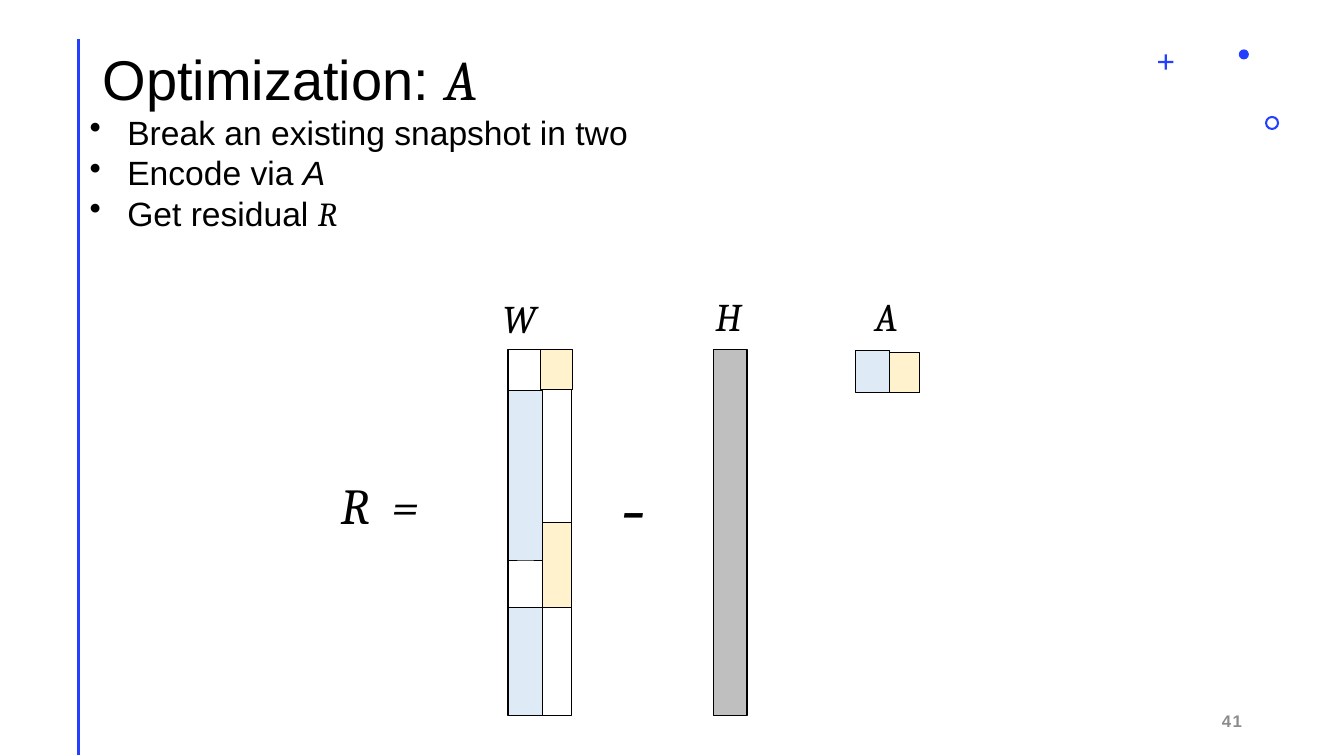
import pptx
import pptx.util
import pptx.dml.color
import pptx.enum.shapes
import pptx.enum.text
import pptx.oxml.ns
import lxml.etree

Pt = pptx.util.Pt
SHAPE = pptx.enum.shapes.MSO_SHAPE
ANCHOR = pptx.enum.text.MSO_ANCHOR
ALIGN = pptx.enum.text.PP_ALIGN

COLOURS = {
    "accent": "243FFF",
    "black": "000000",
    "white": "FFFFFF",
    "blue": "DEEBF7",
    "yellow": "FFF2CC",
    "grey": "BFBFBF",
    "number": "8C8C8C",
}


def rgb(name):
    return pptx.dml.color.RGBColor.from_string(COLOURS[name])


def add_block(shapes, left, top, width, height, fill, line=0.5, kind=SHAPE.RECTANGLE):
    """Add a filled shape; a line width of 0 means no outline."""
    block = shapes.add_shape(kind, Pt(left), Pt(top), Pt(width), Pt(height))
    block.shadow.inherit = False
    block.fill.solid()
    block.fill.fore_color.rgb = rgb(fill)
    if line:
        block.line.color.rgb = rgb("black")
        block.line.width = Pt(line)
    else:
        block.line.fill.background()
    return block


def add_text_box(page, left, top, width, height, anchor=ANCHOR.TOP):
    box = page.shapes.add_textbox(Pt(left), Pt(top), Pt(width), Pt(height))
    box.text_frame.word_wrap = True
    box.text_frame.vertical_anchor = anchor
    return box


def style(font, size, name="Arial", colour="black", italic=False):
    font.size = Pt(size)
    font.name = name
    font.italic = italic
    font.color.rgb = rgb(colour)


def add_span(para, text, spacing=0):
    """Add a run, with letter spacing in points."""
    span = para.add_run()
    span.text = text
    if spacing:
        span.font._element.set("spc", str(spacing * 100))
    return span


def add_symbol(page, text, left, top, width, height, size=28):
    """Add an italic maths symbol."""
    para = add_text_box(page, left, top, width, height).text_frame.paragraphs[0]
    style(para.font, size, "Cambria", italic=True)
    add_span(para, text)
    return para


def add_bullet(para):
    properties = para._p.get_or_add_pPr()
    properties.set("marL", str(Pt(27)))
    properties.set("indent", str(-Pt(27)))
    bullet = lxml.etree.SubElement(properties, pptx.oxml.ns.qn("a:buChar"))
    bullet.set("char", "•")


def add_rule(page, x, top, bottom):
    rule = page.shapes.add_connector(
        pptx.enum.shapes.MSO_CONNECTOR.STRAIGHT, Pt(x), Pt(top), Pt(x), Pt(bottom))
    rule.line.color.rgb = rgb("accent")
    rule.line.width = Pt(2)
    lxml.etree.SubElement(rule._element.spPr, pptx.oxml.ns.qn("a:effectLst"))


def add_ornaments(page):
    add_rule(page, 56.2, 28, 539.5)
    plus = add_block(page.shapes, 827.3, 38.9, 10.8, 10.8, "accent", 0, SHAPE.CROSS)
    plus.adjustments[0] = 0.43
    ring = add_block(page.shapes, 903.6, 82.8, 10.1, 10.1, "accent", 0, SHAPE.DONUT)
    ring.adjustments[0] = 0.15
    add_block(page.shapes, 884.9, 35.3, 7.2, 7.2, "accent", 0, SHAPE.OVAL)


def add_title(page):
    box = add_text_box(page, 66.2, 6.5, 828, 104.4, ANCHOR.MIDDLE)
    para = box.text_frame.paragraphs[0]
    para.line_spacing = 0.9
    for text, font, italic in (("Optimization: ", "Arial", False), ("A", "Cambria", True)):
        style(add_span(para, text).font, 40, font, italic=italic)


def add_steps(page):
    frame = add_text_box(page, 56.9, 76.3, 422.6, 123.8).text_frame
    steps = (
        ("Break an existing snapshot in two", "", "Arial"),
        ("Encode via ", "A", "Arial"),
        ("Get residual ", "R", "Cambria"),
    )
    for index, (text, symbol, font) in enumerate(steps):
        para = frame.add_paragraph() if index else frame.paragraphs[0]
        add_bullet(para)
        style(add_span(para, text).font, 24)
        if symbol:
            style(add_span(para, symbol).font, 24, font, italic=True)


def add_matrices(page):
    weights = page.shapes.add_group_shape().shapes
    add_block(weights, 362.9, 249.8, 45.4, 261.4, "white", 1)
    for left, top, width, height, fill in (
        (387.4, 373, 20.9, 61.2, "yellow"),
        (363.4, 434.2, 23.8, 77, "blue"),
        (386.3, 249.5, 22.3, 28.8, "yellow"),
        (363.4, 279, 23.8, 121, "blue"),
    ):
        add_block(weights, left, top, width, height, fill)

    add_block(page.shapes, 509.8, 249.8, 23.8, 261.4, "grey", 1)

    add_block(page.shapes, 611.6, 251.6, 45.4, 28.8, "white", 1)
    add_block(page.shapes, 634.7, 251.6, 22.3, 28.8, "yellow")
    add_block(page.shapes, 611.3, 250.6, 23.8, 29.5, "blue")


def add_equation(page):
    add_symbol(page, "W", 352.1, 206.6, 112.3, 41)
    add_symbol(page, "H", 504, 205.2, 45.4, 41)
    add_symbol(page, "A", 617.8, 205.2, 112.3, 41)
    add_symbol(page, "-", 436.3, 320.4, 45.4, 79.9, 60)
    residual = add_symbol(page, "R", 236.2, 334.8, 91.4, 51.1, 36)
    add_span(residual, " ", 8)
    add_span(residual, "=")


def add_page_number(page):
    box = add_text_box(page, 678.2, 500.4, 216, 28.8, ANCHOR.MIDDLE)
    para = box.text_frame.paragraphs[0]
    para.alignment = ALIGN.RIGHT
    style(para.font, 12, colour="number")
    para.font.bold = True
    add_span(para, "41", 1)


def main():
    deck = pptx.Presentation()
    deck.slide_width = Pt(960)
    deck.slide_height = Pt(540)
    page = deck.slides.add_slide(deck.slide_layouts[6])
    add_ornaments(page)
    add_title(page)
    add_steps(page)
    add_matrices(page)
    add_equation(page)
    add_page_number(page)
    deck.save("out.pptx")


if __name__ == "__main__":
    main()
